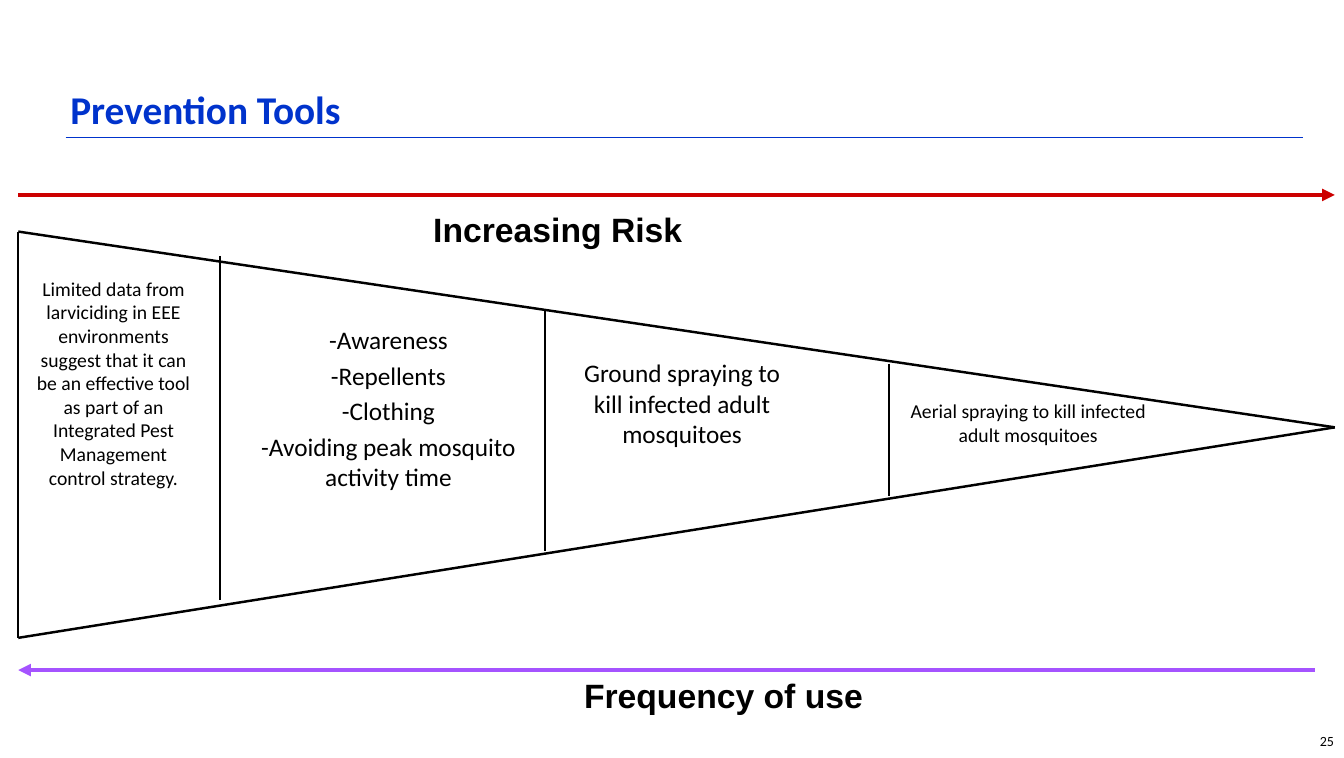
from dataclasses import dataclass

from lxml import etree
from pptx import Presentation
from pptx.dml.color import RGBColor
from pptx.enum.shapes import MSO_CONNECTOR
from pptx.enum.text import MSO_ANCHOR, PP_ALIGN
from pptx.oxml.ns import qn
from pptx.util import Cm, Pt

STRAIGHT = MSO_CONNECTOR.STRAIGHT
TOP, BOTTOM = MSO_ANCHOR.TOP, MSO_ANCHOR.BOTTOM
LEFT, CENTER, RIGHT = PP_ALIGN.LEFT, PP_ALIGN.CENTER, PP_ALIGN.RIGHT


@dataclass(frozen=True)
class Theme:
    body: str = "Calibri"
    label: str = "Arial"
    ink: str = "000000"
    blue: str = "0033CC"
    red: str = "CC0000"
    violet: str = "A553FF"
    title: int = 28
    head: int = 24
    text: int = 18
    small: int = 14
    tiny: int = 10
    hair: float = 0.75
    thin: float = 1.5
    edge: float = 1.75
    bold: float = 3


THEME = Theme()


def add_line(slide, start, end, color, width, arrow=False):
    line = slide.shapes.add_connector(STRAIGHT, *map(Cm, start + end))
    line.line.color.rgb = RGBColor.from_string(color)
    line.line.width = Pt(width)
    if arrow:
        tip = etree.SubElement(line.line._get_or_add_ln(), qn("a:tailEnd"))
        tip.set("type", "triangle")
    etree.SubElement(line._element.spPr, qn("a:effectLst"))


def add_text(slide, box, lines, size, align=CENTER, anchor=TOP, gap=0,
             pitch=1.0, color=THEME.ink, **style):
    """Place one paragraph per line, with a gap in points between them."""
    frame = slide.shapes.add_textbox(*map(Cm, box)).text_frame
    frame.word_wrap = True
    frame.vertical_anchor = anchor
    font = {"name": THEME.body, "size": Pt(size), **style}
    for i, line in enumerate(lines):
        para = frame.add_paragraph() if i else frame.paragraphs[0]
        form = {"alignment": align, "line_spacing": pitch,
                "space_before": Pt(gap if i else 0)}
        for key, value in form.items():
            setattr(para, key, value)
        run = para.add_run()
        run.text = line
        run.font.color.rgb = RGBColor.from_string(color)
        for key, value in font.items():
            setattr(run.font, key, value)


def add_title(slide, box, text):
    x, y, w, h = box
    add_line(slide, (x + 0.13, y + h), (x + w, y + h), THEME.blue, THEME.hair)
    add_text(slide, box, [text], THEME.title, LEFT, BOTTOM, pitch=0.9,
             color=THEME.blue, bold=True)


def add_trend(slide, box, start, end, text, color, align):
    """Draw an arrow and its caption; start and end are relative to the box."""
    x, y, w, h = box
    add_line(slide, (x + start[0], y + start[1]), (x + end[0], y + end[1]),
             color, THEME.bold, arrow=True)
    add_text(slide, box, [text], THEME.head, align, name=THEME.label, bold=True)


def add_wedge(slide, box):
    x, y, w, h = box
    tip, high, low = (x + w, y + 4.92), (x, y), (x, y + h)
    add_line(slide, tip, high, THEME.ink, THEME.edge)
    add_line(slide, tip, low, THEME.ink, THEME.edge)
    walls = [(0, 0, h), (5.08, 0.61, 9.27), (13.23, 1.95, 8.02),
             (21.89, 3.32, 6.65)]
    for left, top, base in walls:
        add_line(slide, (x + left, y + top), (x + left, y + base),
                 THEME.ink, THEME.thin)
    tools = [
        ((0.2, 1.01, 4.39, 5.64), THEME.small,
         ["Limited data from larviciding in EEE environments suggest that it "
          "can be an effective tool as part of an Integrated Pest Management "
          "control strategy."]),
        ((5.48, 2.21, 7.65, 4.57), THEME.text,
         ["-Awareness", "-Repellents", "-Clothing",
          "-Avoiding peak mosquito activity time"]),
        ((13.74, 3.04, 5.89, 2.57), THEME.text,
         ["Ground spraying to kill infected adult mosquitoes"]),
        ((21.89, 4.09, 6.99, 1.45), THEME.small,
         ["Aerial spraying to kill infected adult mosquitoes"]),
    ]
    for (left, top, wide, high), size, lines in tools:
        add_text(slide, (x + left, y + top, wide, high), lines, size, gap=3.75)


def main():
    deck = Presentation()
    deck.slide_width, deck.slide_height = Cm(33.78), Cm(19.05)
    slide = deck.slides.add_slide(deck.slide_layouts[6])
    add_title(slide, (1.52, 0.13, 31.22, 3.33), "Prevention Tools")
    add_wedge(slide, (0.46, 5.82, 33.09, 10.21))
    add_trend(slide, (10.64, 5.13, 16.79, 1.27), (-10.18, -0.23),
              (22.91, -0.23), "Increasing Risk", THEME.red, LEFT)
    add_trend(slide, (4.09, 16.84, 28.19, 1.27), (28.96, 0), (-3.63, 0),
              "Frequency of use", THEME.violet, CENTER)
    add_text(slide, (28.01, 18.29, 5.77, 0.76), ["25"], THEME.tiny, RIGHT)
    deck.save("out.pptx")


if __name__ == "__main__":
    main()
